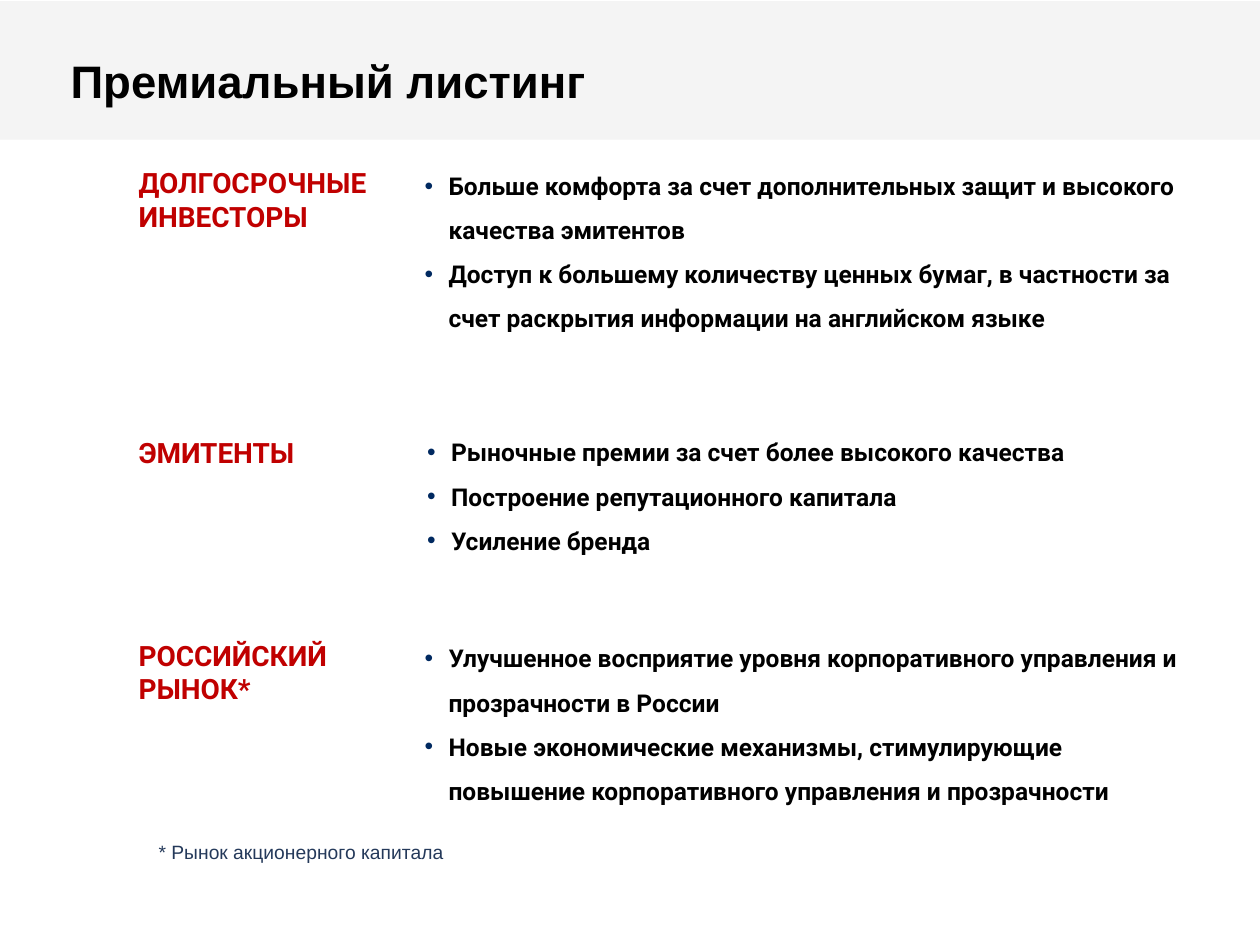
from lxml import etree
from pptx import Presentation
from pptx.dml.color import RGBColor
from pptx.enum import shapes, text
from pptx.oxml.ns import qn
from pptx.util import Inches, Pt

LABEL_FONT = dict(name="Roboto", size=Pt(16), bold=True, color="C00000")
BULLET_FONT = dict(name="Roboto", size=Pt(14), bold=True, color="000000")
NOTE_FONT = dict(name="Arial", size=Pt(11), bold=False, color="24395A")
TITLE_FONT = dict(name="Arial", size=Pt(26), bold=True, color="000000")

# label, label top, box left, box top, bullets
SECTIONS = [
    ("ДОЛГОСРОЧНЫЕ ИНВЕСТОРЫ", 1.07, 2.8, 1.25, [
        "Больше комфорта за счет дополнительных защит и высокого качества эмитентов",
        "Доступ к большему количеству ценных бумаг, в частности за счет "
        "раскрытия информации на английском языке"]),
    ("ЭМИТЕНТЫ", 3.08, 2.82, 3.19, [
        "Рыночные премии за счет более высокого качества",
        "Построение репутационного капитала",
        "Усиление бренда"]),
    ("РОССИЙСКИЙ РЫНОК*", 4.82, 2.8, 5, [
        "Улучшенное восприятие уровня корпоративного управления и прозрачности в России",
        "Новые экономические механизмы, стимулирующие повышение "
        "корпоративного управления и прозрачности"]),
]


def rgb(value):
    return RGBColor.from_string(value)


def format_font(font, values):
    for name, value in values.items():
        if name == "color":
            font.color.rgb = rgb(value)
        else:
            setattr(font, name, value)


def set_frame(frame, anchor, side, end):
    """Wrap the text, anchor it and set the side and top/bottom insets."""
    values = dict(word_wrap=True, auto_size=text.MSO_AUTO_SIZE.NONE,
                  vertical_anchor=anchor,
                  margin_left=Inches(side), margin_right=Inches(side),
                  margin_top=Inches(end), margin_bottom=Inches(end))
    for name, value in values.items():
        setattr(frame, name, value)


def write(paragraph, content, font):
    run = paragraph.add_run()
    run.text = content
    paragraph.alignment = text.PP_ALIGN.LEFT
    format_font(run.font, font)


def add_bullet(paragraph, color):
    properties = paragraph._p.get_or_add_pPr()
    properties.set("marL", str(Inches(0.68)))
    properties.set("indent", str(Inches(-0.19)))
    bullet_color = etree.SubElement(properties, qn("a:buClr"))
    etree.SubElement(bullet_color, qn("a:srgbClr"), val=color)
    etree.SubElement(properties, qn("a:buFont"), typeface="Arial")
    etree.SubElement(properties, qn("a:buChar"), char="•")


def add_rectangle(slide, left, top, width, height, color):
    shape = slide.shapes.add_shape(shapes.MSO_SHAPE.RECTANGLE, Inches(left),
                                   Inches(top), Inches(width), Inches(height))
    shape.shadow.inherit = False
    shape.fill.solid()
    shape.fill.fore_color.rgb = rgb(color)
    shape.line.fill.background()
    return shape


def add_bullet_box(slide, left, top, bullets):
    frame = add_rectangle(slide, left, top, 6.85, 1.38, "FFFFFF").text_frame
    set_frame(frame, text.MSO_ANCHOR.MIDDLE, 0.08, 0.08)
    for index, content in enumerate(bullets):
        paragraph = frame.add_paragraph() if index else frame.paragraphs[0]
        add_bullet(paragraph, "002960")
        paragraph.line_spacing = 1.5
        write(paragraph, content, BULLET_FONT)


def add_text(slide, left, top, width, height, content, font, anchor, side, end):
    box = slide.shapes.add_textbox(Inches(left), Inches(top),
                                   Inches(width), Inches(height))
    set_frame(box.text_frame, anchor, side, end)
    write(box.text_frame.paragraphs[0], content, font)


def add_title(slide, content):
    title = slide.shapes.title
    title.left, title.top = Inches(0.46), Inches(0.21)
    title.width, title.height = Inches(9), Inches(0.86)
    set_frame(title.text_frame, text.MSO_ANCHOR.MIDDLE, 0.1, 0.05)
    write(title.text_frame.paragraphs[0], content, TITLE_FONT)
    title.element.getparent().append(title.element)  # in front of the band


def main():
    presentation = Presentation()
    presentation.slide_width = Inches(10)
    presentation.slide_height = Inches(7.5)
    slide = presentation.slides.add_slide(presentation.slide_layouts[5])

    add_rectangle(slide, 0, 0.01, 10, 1.1, "F4F4F4")
    for label, label_top, box_left, box_top, bullets in SECTIONS:
        add_bullet_box(slide, box_left, box_top, bullets)
        add_text(slide, 0.99, label_top, 2.4, 1.02, label, LABEL_FONT,
                 text.MSO_ANCHOR.MIDDLE, 0.11, 0.06)
    add_text(slide, 1.16, 6.62, 3.31, 0.28, "* Рынок акционерного капитала",
             NOTE_FONT, text.MSO_ANCHOR.TOP, 0.1, 0.05)
    add_title(slide, "Премиальный листинг")

    presentation.save("out.pptx")


if __name__ == "__main__":
    main()
